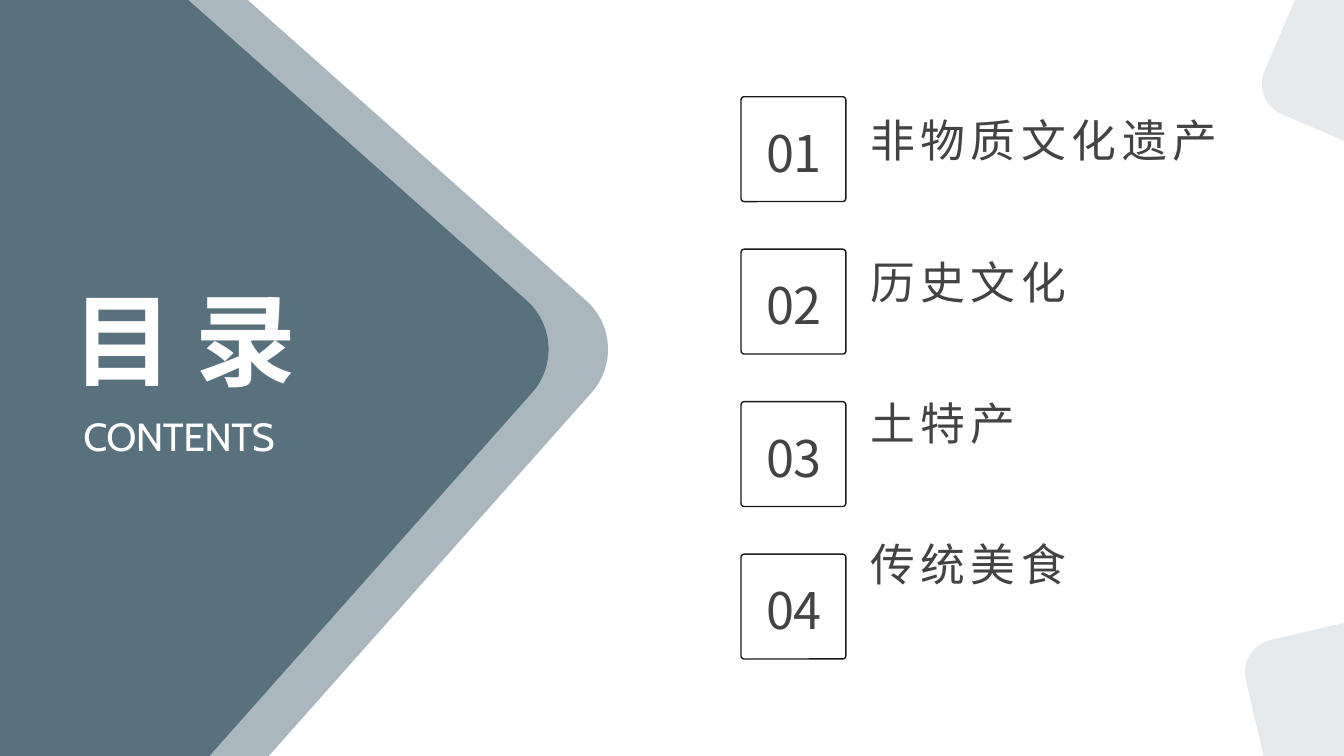
from pptx import Presentation
from pptx.dml.color import RGBColor
from pptx.enum.shapes import MSO_SHAPE as Preset
from pptx.enum.text import MSO_ANCHOR as Anchor, MSO_AUTO_SIZE as AutoSize, PP_ALIGN as Align
from pptx.oxml.ns import qn
from pptx.util import Inches, Pt
from lxml.etree import SubElement

CELL = 0.25
TEAL, INK, EDGE, WHITE = "58717E", "434343", "1A1A1A", "FFFFFF"
CJK, LATIN = "Noto Sans CJK JP", "Cabin"
TOPICS = ["非物质文化遗产", "历史文化", "土特产", "传统美食"]
FIRST_ROW, ROW_PITCH = 3.84, 6.05
TOPIC_LINE = 46.3


def cells(*counts):
    """Turn counts of grid columns or rows into lengths."""
    return [Inches(count * CELL) for count in counts]


def color(hex_code):
    """Return the colour for a hex string."""
    return RGBColor.from_string(hex_code)


def rounded_square(slide, left, top, side, corner, turn=0, opacity=None, edge=None):
    """Draw a rounded square, tinted teal or outlined when an edge is given."""
    square = slide.shapes.add_shape(Preset.ROUNDED_RECTANGLE, *cells(left, top, side, side))
    square.adjustments[0] = corner
    square.rotation = turn
    square.shadow.inherit = False
    if edge:
        square.fill.background()
        square.line.color.rgb = color(edge)
        square.line.width = Pt(1)
        return
    square.line.fill.background()
    square.fill.solid()
    square.fill.fore_color.rgb = color(TEAL)
    if opacity:
        tint = square.fill._xPr.find(".//" + qn("a:srgbClr"))
        SubElement(tint, qn("a:alpha"), val=str(opacity * 1000))


def style(paragraph, font, size, ink, spacing=0, bold=False, align=Align.LEFT):
    """Format the runs of one paragraph."""
    paragraph.alignment = align
    for run in paragraph.runs:
        run.font.name = font
        run.font.size = Pt(size)
        run.font.bold = bold
        run.font.color.rgb = color(ink)
        props = run.font._element
        props.set("spc", str(round(spacing * 100)))
        SubElement(props, qn("a:ea"), typeface=font)


def settle(holder, left, top, width, height, anchor=Anchor.TOP):
    """Place a text holder on the grid and return its frame."""
    holder.left, holder.top, holder.width, holder.height = cells(left, top, width, height)
    frame = holder.text_frame
    frame.word_wrap = True
    frame.auto_size = AutoSize.NONE
    frame.vertical_anchor = anchor
    return frame


def label(slide, text, box, anchor=Anchor.TOP, **look):
    """Add a one-line text box."""
    frame = settle(slide.shapes.add_textbox(0, 0, 0, 0), *box, anchor)
    frame.text = text
    style(frame.paragraphs[0], **look)


def heading(slide):
    """Fill the title placeholder and bring it in front of the panel."""
    title = slide.shapes.title
    frame = settle(title, 2.48, 10.84, 14.08, 6.2)
    frame.text = "目录"
    style(frame.paragraphs[0], CJK, 72, WHITE, spacing=16, bold=True)
    title.element.getparent().append(title.element)


def topic_list(slide):
    """Fill the body placeholder with one topic per numbered square."""
    frame = settle(slide.placeholders[1], 34.12, FIRST_ROW + 0.64, 15, 22)
    frame.margin_top = 0
    frame.text = "\n".join(TOPICS)
    for index, topic in enumerate(frame.paragraphs):
        style(topic, CJK, 32, INK, spacing=4)
        topic.space_before = Pt(ROW_PITCH * CELL * 72 - TOPIC_LINE) if index else Pt(0)
        props = topic._p.get_or_add_pPr()
        props.set("marL", "0")
        props.set("indent", "0")
        SubElement(props, qn("a:buNone"))


def main():
    """Build the contents slide."""
    deck = Presentation()
    deck.slide_width, deck.slide_height = Inches(13.33), Inches(7.5)
    slide = deck.slides.add_slide(deck.slide_layouts[1])

    for left, opacity in ((-13.88, 50), (-16.24, None)):
        rounded_square(slide, left, -1.2, 32.4, 0.08, turn=41.6, opacity=opacity)
    heading(slide)
    label(slide, "CONTENTS", (2.92, 16.16, 9.08, 2.28),
          font=LATIN, size=28, ink=WHITE, spacing=-0.4)

    topic_list(slide)
    for index in range(len(TOPICS)):
        top = FIRST_ROW + index * ROW_PITCH
        label(slide, f"{index + 1:02}", (27.8, top + 0.77, 7.4, 2.84), Anchor.MIDDLE,
              font=CJK, size=36, ink=INK, align=Align.CENTER)
        rounded_square(slide, 29.4, top, 4.16, 0.03, edge=EDGE)

    for left, top, turn in ((52.2, -8.4, 23.2), (50.76, 23.64, 76.9)):
        rounded_square(slide, left, top, 16.28, 0.08, turn=turn, opacity=15)
    deck.save("out.pptx")


if __name__ == "__main__":
    main()
